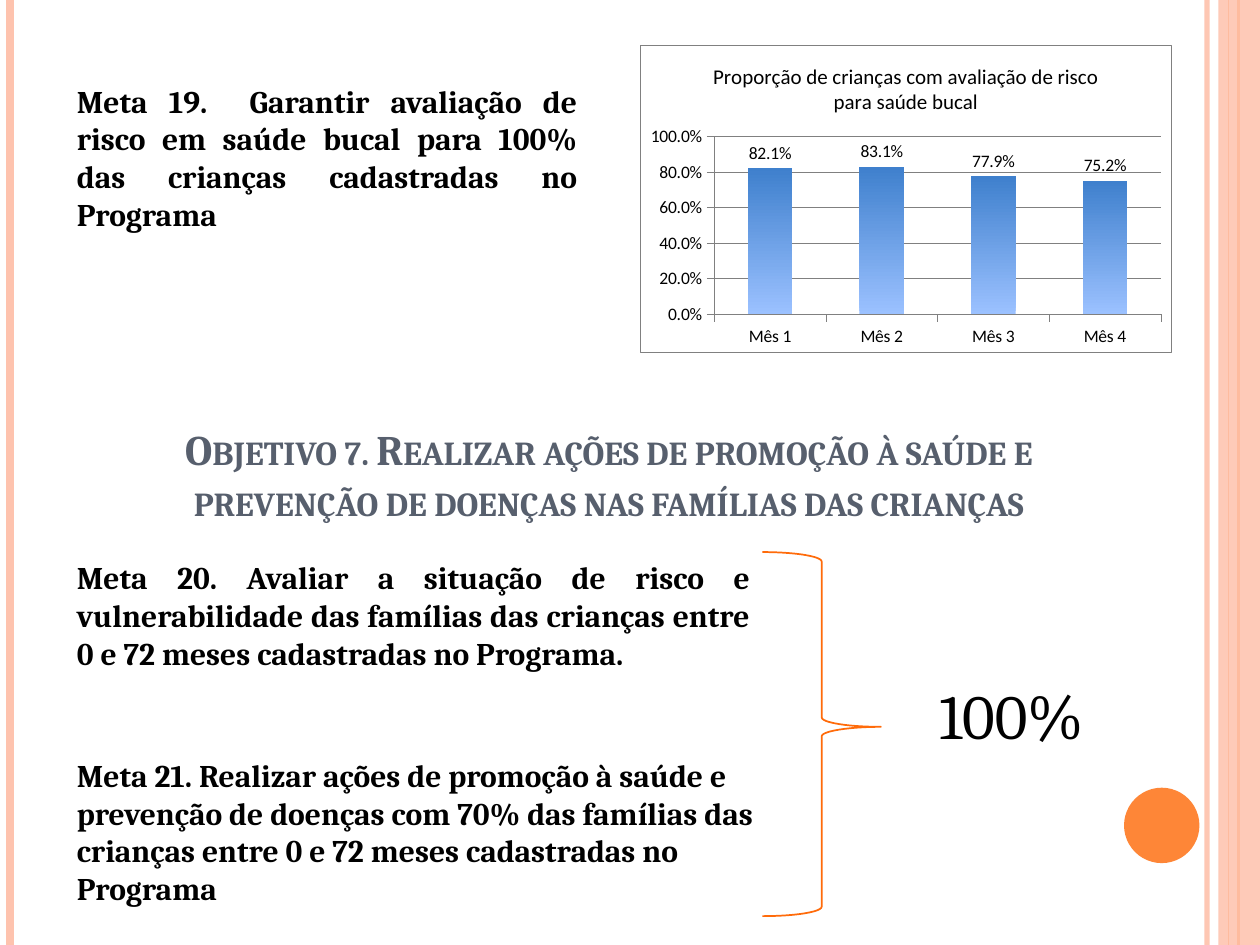
from pptx import Presentation
from pptx.chart.data import CategoryChartData
from pptx.dml.color import RGBColor
from pptx.enum.chart import XL_CHART_TYPE, XL_LABEL_POSITION, XL_TICK_MARK
from pptx.enum.shapes import MSO_CONNECTOR, MSO_SHAPE
from pptx.enum.text import MSO_ANCHOR, MSO_AUTO_SIZE, PP_ALIGN
from pptx.oxml import parse_xml
from pptx.oxml.ns import nsdecls, qn
from pptx.util import Cm, Pt
from lxml.etree import SubElement

theme = {
    "face": "Cambria", "plot": "Calibri",
    "pink": "FEC3AE", "flame": "FE8637", "brace": "FF6B0A",
    "slate": "575F6D", "ink": "000000", "paper": "FFFFFF", "grey": "808080",
    "light": "9BC1FF", "blue": "3F80CD",
    "goal": Pt(18), "head": Pt(24), "big": Pt(36), "axis": Pt(10), "label": Pt(12),
}


def tint(color, name, alpha=None):
    color.rgb = RGBColor.from_string(theme[name])
    if alpha:
        for node in color._xFill.iter(qn("a:srgbClr")):
            SubElement(node, qn("a:alpha"), val=str(alpha * 1000))


def style(font, color="ink", **form):
    for key, val in form.items():
        setattr(font, key, val)
    tint(font.color, color)


deck = Presentation()
deck.slide_width, deck.slide_height = Cm(25.4), Cm(19.05)
slide = deck.slides.add_slide(deck.slide_layouts[5])
shapes = slide.shapes

bars = [(24.33, "pink", 3, 93), (0.2, "pink", 4.5, None),
        (24.97, "flame", 1.5, None), (24.77, "flame", 0.75, None)]
for left, color, width, alpha in bars:
    bar = shapes.add_connector(MSO_CONNECTOR.STRAIGHT, Cm(left), 0, Cm(left), Cm(19.05))
    bar.line.width = Pt(width)
    bar.line.fill.solid()
    tint(bar.line.fill.fore_color, color, alpha)
    SubElement(bar._element.spPr, qn("a:effectLst"))

forms = [(MSO_SHAPE.RECTANGLE, (24.56, 0, 0.84, 19.05), "pink", 87),
         (MSO_SHAPE.OVAL, (22.66, 15.88, 1.52, 1.52), "flame", None)]
for kind, box, color, alpha in forms:
    form = shapes.add_shape(kind, *map(Cm, box))
    form.shadow.inherit = False
    form.fill.solid()
    tint(form.fill.fore_color, color, alpha)
    form.line.fill.background()

brace = shapes.add_shape(MSO_SHAPE.RIGHT_BRACE, Cm(15.37), Cm(11.13), Cm(2.39), Cm(7.34))
brace.shadow.inherit = False
brace.fill.background()
brace.line.width = Pt(1)
tint(brace.line.color, "brace")
brace.adjustments[0], brace.adjustments[1] = 0.08, 0.48

title = shapes.title
title.left, title.top, title.width, title.height = map(Cm, (1.9, 7.52, 20.75, 3.18))
frame = title.text_frame
for key, val in {"word_wrap": True, "auto_size": MSO_AUTO_SIZE.NONE,
                 "vertical_anchor": MSO_ANCHOR.BOTTOM}.items():
    setattr(frame, key, val)
para = frame.paragraphs[0]
para.alignment = PP_ALIGN.CENTER
run = para.add_run()
run.text = "Objetivo 7. Realizar ações de promoção à saúde e prevenção de doenças nas famílias das crianças"
style(run.font, "slate", name=theme["face"], size=theme["head"], bold=True)
run.font._element.set("cap", "small")

texts = [
    ("Meta 19.  Garantir avaliação de risco em saúde bucal para 100% das crianças cadastradas no Programa",
     (1.3, 1.52, 10.59, 3.33), PP_ALIGN.JUSTIFY, "goal"),
    ("Meta 20. Avaliar a situação de risco e vulnerabilidade das famílias das crianças entre 0 e 72 meses "
     "cadastradas no Programa.",
     (1.3, 11.13, 14.07, 3.33), PP_ALIGN.JUSTIFY, "goal"),
    ("Meta 21. Realizar ações de promoção à saúde e prevenção de doenças com 70% das famílias das crianças "
     "entre 0 e 72 meses cadastradas no Programa",
     (1.3, 15.11, 14.6, 3.33), PP_ALIGN.LEFT, "goal"),
    ("100%", (18.69, 13.51, 3.78, 1.8), PP_ALIGN.LEFT, "big"),
]
for words, box, align, size in texts:
    frame = shapes.add_textbox(*map(Cm, box)).text_frame
    frame.word_wrap = size == "goal"
    frame.auto_size = MSO_AUTO_SIZE.SHAPE_TO_FIT_TEXT
    para = frame.paragraphs[0]
    para.alignment = align
    run = para.add_run()
    run.text = words
    style(run.font, name=theme["face"], size=theme[size], bold=size == "goal")

name = "Proporção de crianças com avaliação de risco para saúde bucal"
data = CategoryChartData(number_format="0.0%")
data.categories = [f"Mês {i}" for i in range(1, 5)]
data.add_series(name, (0.821, 0.831, 0.779, 0.752))
chart = shapes.add_chart(XL_CHART_TYPE.COLUMN_CLUSTERED, Cm(12.9), Cm(0.91), Cm(10.72), Cm(6.2), data).chart
chart.has_legend = False
style(chart.font, name=theme["plot"], size=theme["axis"])
chart.has_title = True
chart.chart_title.include_in_layout = False
para = chart.chart_title.text_frame.paragraphs[0]
run = para.add_run()
run.text = name
style(run.font, name=theme["plot"], size=theme["label"], bold=False)

chart._chartSpace.find(qn("c:chart")).addnext(parse_xml(
    f'<c:spPr {nsdecls("c", "a")}><a:solidFill><a:srgbClr val="{theme["paper"]}"/></a:solidFill>'
    f'<a:ln w="{Pt(0.25)}"><a:solidFill><a:srgbClr val="{theme["grey"]}"/></a:solidFill></a:ln></c:spPr>'))

scale = chart.value_axis
for key, val in {"minimum_scale": 0, "maximum_scale": 1, "major_unit": 0.2,
                 "has_major_gridlines": True}.items():
    setattr(scale, key, val)
scale.tick_labels.number_format = "0.0%"
scale.tick_labels.number_format_is_linked = False
for axis in (scale, chart.category_axis):
    axis.major_tick_mark = XL_TICK_MARK.OUTSIDE
    style(axis.tick_labels.font, name=theme["plot"], size=theme["axis"])
for part in (scale, chart.category_axis, scale.major_gridlines):
    part.format.line.width = Pt(0.25)
    tint(part.format.line.color, "grey")

plot = chart.plots[0]
plot.gap_width = 150
plot.vary_by_categories = False
plot.has_data_labels = True
for key, val in {"show_value": True, "number_format": "0.0%", "number_format_is_linked": False,
                 "position": XL_LABEL_POSITION.OUTSIDE_END}.items():
    setattr(plot.data_labels, key, val)
style(plot.data_labels.font, name=theme["plot"], size=theme["axis"])
fill = plot.series[0].format.fill
fill.gradient()
fill.gradient_angle = 90
for stop, color, place in zip(fill.gradient_stops, ("light", "blue"), (0, 1)):
    tint(stop.color, color)
    stop.position = place

deck.save("out.pptx")
